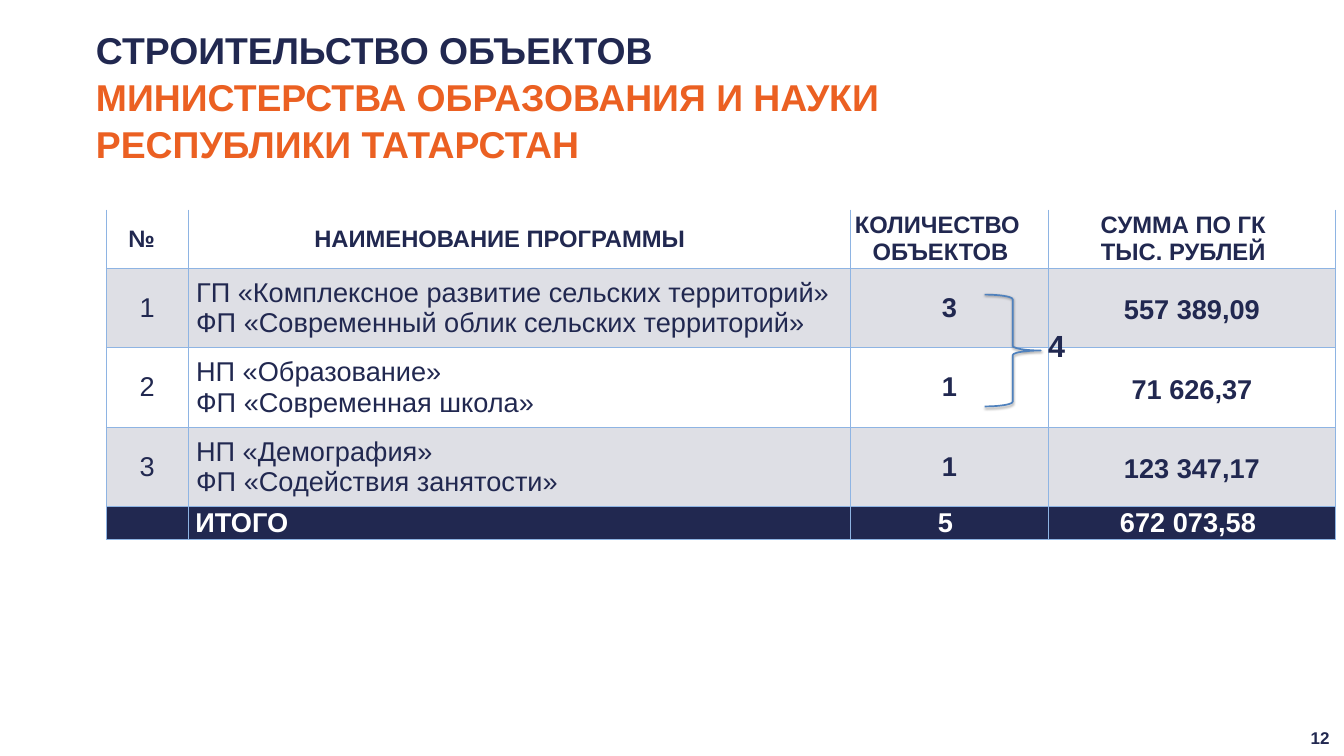
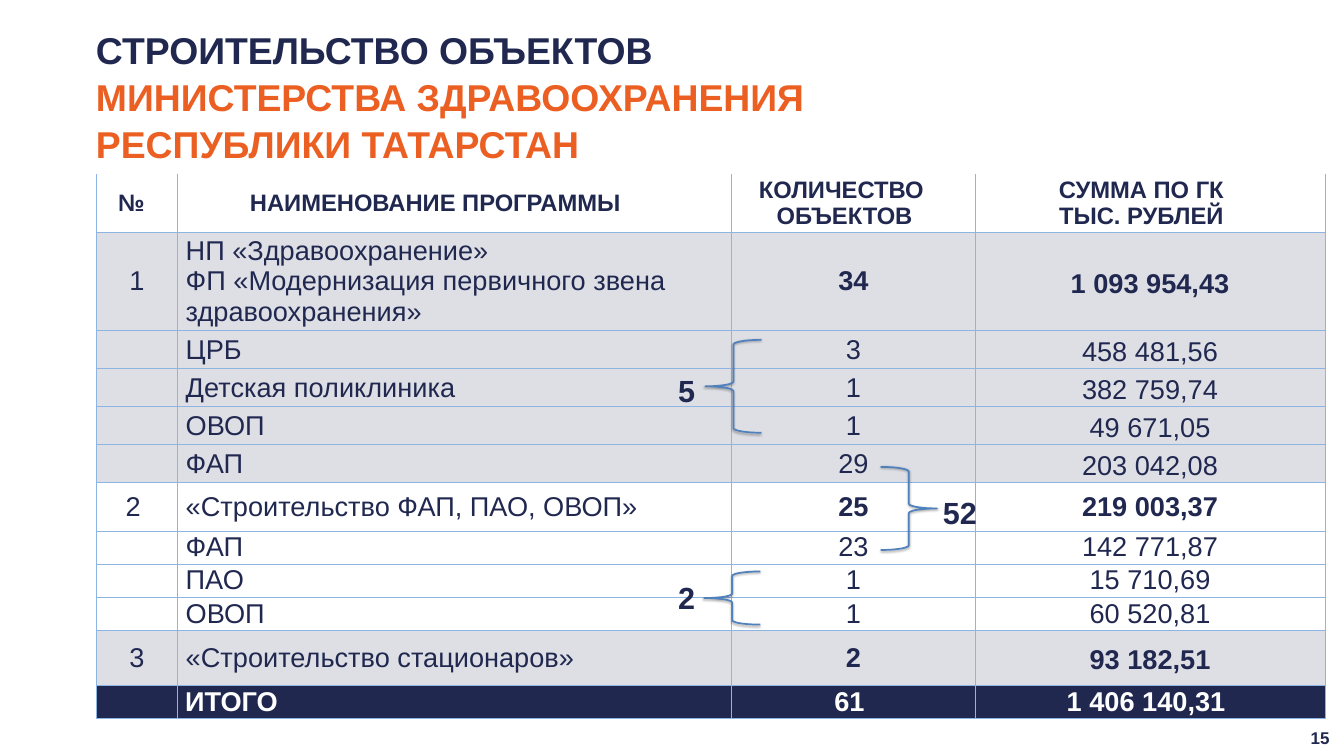
"""Build two slides on construction programmes of Tatarstan ministries."""
import dataclasses

import lxml.etree
import pptx
import pptx.dml.color
import pptx.enum.shapes
import pptx.enum.text
import pptx.oxml.ns
import pptx.util

RGB = pptx.dml.color.RGBColor
ALIGN = pptx.enum.text.PP_ALIGN
MIDDLE = pptx.enum.text.MSO_ANCHOR.MIDDLE
SHAPE = pptx.enum.shapes.MSO_SHAPE
qn = pptx.oxml.ns.qn

NAVY = RGB(0x21, 0x28, 0x50)
ORANGE = RGB(0xEB, 0x60, 0x22)
WHITE = RGB(0xFF, 0xFF, 0xFF)
GREY = RGB(0xDE, 0xDF, 0xE5)
BORDER = RGB(0x8E, 0xB4, 0xE3)
BRACE = RGB(0x4F, 0x81, 0xBD)
BLACK = RGB(0, 0, 0)

FONT = "Arial"
WIDTH = pptx.util.Inches(21.99)
HEIGHT = pptx.util.Inches(12.37)
BRACE_WIDTH = 4.18
LABEL_SIZE = (3.77, 5.74)
TOTAL_HEIGHT = 4.37

HEADER = ("№", "НАИМЕНОВАНИЕ ПРОГРАММЫ", "КОЛИЧЕСТВО \nОБЪЕКТОВ",
          "СУММА ПО ГК\nТЫС. РУБЛЕЙ")
HEADER_INSETS = ((0.17, 0.35), (0, 0.64), (0, 0.29), (0, 0.29))
BODY_INSETS = ((0.01, 0.01), (0.13, 0.01), (0.01, 0.01), (0.01, 0.01))
TOTAL_INSETS = ((0, 0), (0.12, 0), (0, 0.13), (0, 0.13))


@dataclasses.dataclass
class Row:
    """Describe a programme row; its height is a percentage of the slide."""
    cells: tuple
    height: float
    fill: RGB = None
    bold: bool = True
    spacing: float = 1.15


def box(left, top, width, height):
    """Turn percentages of the slide into a position and a size."""
    return (int(WIDTH * left / 100), int(HEIGHT * top / 100),
            int(WIDTH * width / 100), int(HEIGHT * height / 100))


def write(p, text, size=32, bold=True, color=NAVY, align=ALIGN.LEFT, spacing=None):
    """Add text to a paragraph, with line breaks at newlines."""
    p.alignment = align
    if spacing:
        p.line_spacing = spacing
    for i, line in enumerate(text.split("\n")):
        if i:
            p.add_line_break()
        r = p.add_run()
        r.text = line
        r.font.name = FONT
        r.font.size = pptx.util.Pt(size)
        r.font.bold = bold
        r.font.color.rgb = color


def set_insets(target, left, top, right, bottom):
    """Set the inner margins of a cell or text frame in inches."""
    target.margin_left = pptx.util.Inches(left)
    target.margin_top = pptx.util.Inches(top)
    target.margin_right = pptx.util.Inches(right)
    target.margin_bottom = pptx.util.Inches(bottom)


def add_color(parent, color):
    """Add an RGB colour element and return it."""
    return lxml.etree.SubElement(parent, qn("a:srgbClr"), val=str(color))


def set_borders(cell, has_top):
    """Draw thin cell borders, leaving the top open if asked."""
    tcPr = cell._tc.get_or_add_tcPr()
    for side in ("L", "R", "T", "B"):
        ln = lxml.etree.SubElement(tcPr, qn("a:ln" + side), w=str(pptx.util.Pt(1)))
        if side == "T" and not has_top:
            lxml.etree.SubElement(ln, qn("a:noFill"))
        else:
            add_color(lxml.etree.SubElement(ln, qn("a:solidFill")), BORDER)


def fill_cell(cell, text, insets, fill=None, has_top=True, **fmt):
    """Format one table cell and write its text."""
    left, right = insets
    set_insets(cell, left, 0, right, 0)
    cell.vertical_anchor = MIDDLE
    set_borders(cell, has_top)
    if fill is None:
        cell.fill.background()
    else:
        cell.fill.solid()
        cell.fill.fore_color.rgb = fill
    if text:
        write(cell.text_frame.paragraphs[0], text, **fmt)


def add_programmes(s, left, top, columns, header_height, rows, total):
    """Add the programme table with its header and total rows."""
    heights = [header_height] + [row.height for row in rows] + [TOTAL_HEIGHT]
    frame = s.shapes.add_table(len(heights), len(columns),
                               *box(left, top, sum(columns), sum(heights)))
    table = frame.table
    table.first_row = table.horz_banding = False
    for column, width in zip(table.columns, columns):
        column.width = int(WIDTH * width / 100)
    for row, height in zip(table.rows, heights):
        row.height = int(HEIGHT * height / 100)
    for c, text in enumerate(HEADER):
        fill_cell(table.cell(0, c), text, HEADER_INSETS[c], has_top=False,
                  size=28, align=ALIGN.CENTER)
    for i, row in enumerate(rows, 1):
        for c, text in enumerate(row.cells):
            fill_cell(table.cell(i, c), text, BODY_INSETS[c], row.fill,
                      bold=row.bold and c > 1,
                      align=ALIGN.LEFT if c == 1 else ALIGN.CENTER,
                      spacing=row.spacing if c == 3 else None)
    for c, text in enumerate(("", "ИТОГО") + total):
        fill_cell(table.cell(len(rows) + 1, c), text, TOTAL_INSETS[c], NAVY,
                  color=WHITE, align=ALIGN.LEFT if c == 1 else ALIGN.CENTER)


def add_brace(s, left, top, height, label, label_left, label_top, rotation=0):
    """Add a brace with a soft shadow and the sum it stands for."""
    sp = s.shapes.add_shape(SHAPE.RIGHT_BRACE, *box(left, top, BRACE_WIDTH, height))
    sp.rotation = rotation
    sp.fill.background()
    sp.line.color.rgb = BRACE
    sp.line.width = pptx.util.Pt(2)
    sp.shadow.inherit = False
    effects = sp._element.spPr.find(qn("a:effectLst"))
    shadow = lxml.etree.SubElement(
        effects, qn("a:outerShdw"), blurRad=str(pptx.util.Pt(3.1)),
        dist=str(pptx.util.Pt(1.6)), dir="5400000", rotWithShape="0")
    lxml.etree.SubElement(add_color(shadow, BLACK), qn("a:alpha"), val="38000")
    tf = s.shapes.add_textbox(*box(label_left, label_top, *LABEL_SIZE)).text_frame
    tf.word_wrap = True
    write(tf.paragraphs[0], label, size=36)


def add_page_number(s, number):
    """Add the page number in the bottom right corner."""
    sp = s.shapes.add_shape(SHAPE.ROUNDED_RECTANGLE, *box(96.59, 95.15, 3.27, 4.77))
    sp.shadow.inherit = False
    sp.fill.background()
    sp.line.fill.background()
    sp.text_frame.vertical_anchor = MIDDLE
    write(sp.text_frame.paragraphs[0], number, size=20, align=ALIGN.CENTER)


def add_slide(prs, ministry, number):
    """Add a slide with the shared title style and page number."""
    s = prs.slides.add_slide(prs.slide_layouts[5])
    add_page_number(s, number)
    title = s.shapes.title
    title.left, title.top, title.width, title.height = box(7.14, 3.15, 88.31, 18.11)
    tf = title.text_frame
    tf.word_wrap = True
    tf.auto_size = pptx.enum.text.MSO_AUTO_SIZE.NONE
    tf.vertical_anchor = pptx.enum.text.MSO_ANCHOR.TOP
    set_insets(tf, 0, 0.02, 0, 0)
    p = tf.paragraphs[0]
    write(p, "СТРОИТЕЛЬСТВО ОБЪЕКТОВ", size=44, spacing=1.05)
    p.add_line_break()
    write(p, f"МИНИСТЕРСТВА {ministry} \nРЕСПУБЛИКИ ТАТАРСТАН", size=44, color=ORANGE)
    return s


def add_education(prs):
    """Add the slide of the ministry of education."""
    s = add_slide(prs, "ОБРАЗОВАНИЯ И НАУКИ", "12")
    rows = [
        Row(("1", "ГП «Комплексное развитие сельских территорий»\n"
             "ФП «Современный облик сельских территорий»", "3", "557 389,09"),
            10.51, GREY),
        Row(("2", "НП «Образование» \nФП «Современная школа»", "1", "71 626,37"), 10.51),
        Row(("3", "НП «Демография» \nФП «Содействия занятости»", "1", "123 347,17"),
            10.51, GREY),
    ]
    add_programmes(s, 7.91, 27.73, (6.09, 49.25, 14.78, 21.33), 7.76, rows,
                   ("5", "672 073,58"))
    add_brace(s, 73.26, 38.97, 14.79, "4", 77.54, 42.85)


def add_health(prs):
    """Add the slide of the ministry of health."""
    s = add_slide(prs, "ЗДРАВООХРАНЕНИЯ", "15")
    modernisation = (("ЦРБ", "3", "458 481,56"),
                     ("Детская поликлиника", "1", "382 759,74"),
                     ("ОВОП", "1", "49 671,05"),
                     ("ФАП", "29", "203 042,08"))
    rural = (("ФАП", "23", "142 771,87"),
             ("ПАО", "1", "15 710,69"),
             ("ОВОП", "1", "60 520,81"))
    rows = [
        Row(("1", "НП «Здравоохранение» \nФП «Модернизация первичного звена "
             "здравоохранения»", "34", "1 093 954,43"), 13.02, GREY),
        *(Row(("",) + cells, 5.03, GREY, bold=False) for cells in modernisation),
        Row(("2 ", "«Строительство ФАП, ПАО, ОВОП»", "25", "219 003,37"), 6.39,
            spacing=None),
        *(Row(("",) + cells, 4.37, bold=False, spacing=None) for cells in rural),
        Row(("3", "«Строительство стационаров»", "2", "93 182,51"), 7.36, GREY),
    ]
    add_programmes(s, 7.14, 23.04, (6.09, 41.2, 18.14, 26.01), 7.68, rows,
                   ("61", "1 406 140,31"))
    add_brace(s, 65.53, 61.76, 10.99, "52", 69.71, 65)
    add_brace(s, 52.48, 44.95, 12.29, "5", 50.02, 48.83, rotation=180)
    add_brace(s, 52.39, 75.59, 7.03, "2", 50.02, 76.23, rotation=180)


def main():
    """Build and save the presentation."""
    prs = pptx.Presentation()
    prs.slide_width, prs.slide_height = WIDTH, HEIGHT
    add_education(prs)
    add_health(prs)
    prs.save("out.pptx")


if __name__ == "__main__":
    main()
